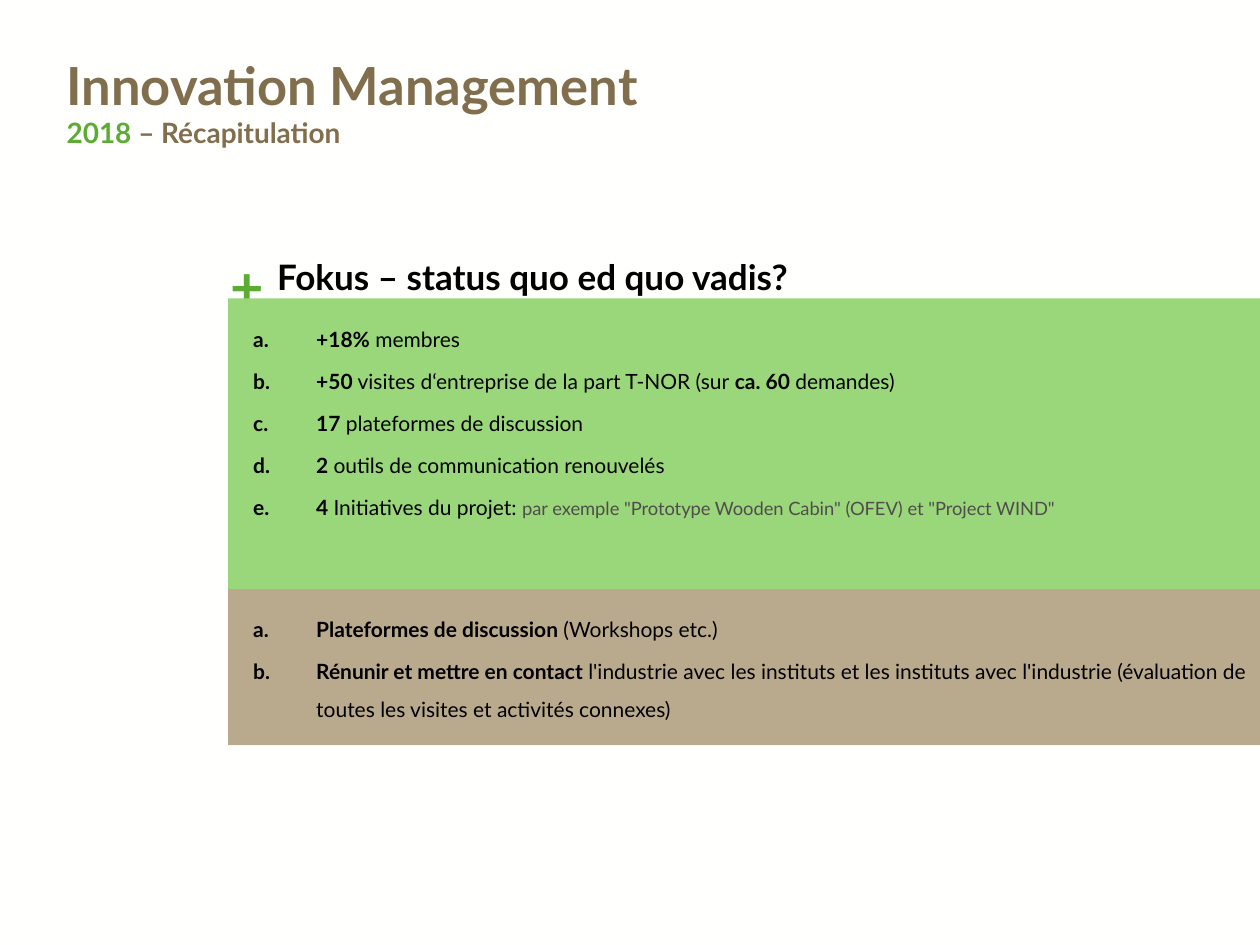
import pptx
import pptx.dml.color
import pptx.enum.shapes
import pptx.enum.text
import pptx.oxml.ns
import pptx.util
from lxml import etree

Pt = pptx.util.Pt

THEME = {
    "font": "Lato",
    "background": "FFFFFE", "brown": "806E4D", "green": "5CAC34",
    "black": "000000", "grey": "504C4C",
    "light green": "9AD77B", "light brown": "BAAA8D",
    "title": 30, "subtitle": 16, "plus": 33, "heading": 20,
    "item": 12, "example": 10.5,
}

# Content: each run is (text, size, colour, bold)
def strong(text):
    return (text, "item", "black", True)


def plain(text):
    return (text, "item", "black", False)


TITLE = [
    ("Innovation Management", "title", "brown", True),
    None,  # line break
    ("2018 ", "subtitle", "green", True),
    ("– Récapitulation", "subtitle", "brown", True),
]
PLUS = [("+", "plus", "green", True)]
HEADING = [("Fokus – status quo ed quo vadis?", "heading", "black", True)]
RESULTS = [
    [strong("+18%"), plain(" membres")],
    [strong("+50"), plain(" visites d‘entreprise de la part T-NOR (sur "),
     strong("ca. 60"), plain(" demandes)")],
    [strong("17"), plain(" plateformes de discussion")],
    [strong("2 "), plain("outils de communication renouvelés")],
    [strong("4 "), plain("Initiatives du projet: "),
     ('par exemple "Prototype Wooden Cabin" (OFEV) et "Project WIND"',
      "example", "grey", False)],
]
OUTLOOK = [
    [strong("Plateformes de discussion "), plain("(Workshops etc.)")],
    [strong("Rénunir et mettre en contact "),
     plain("l'industrie avec les instituts et les instituts avec l'industrie "
           "(évaluation de toutes les visites et activités connexes)")],
]

# Layout in points
SLIDE_W, SLIDE_H = 720, 540
PANEL_LEFT, PANEL_TOP = 130.3, 170.6
PANELS = [(RESULTS, "light green", 166), (OUTLOOK, "light brown", 89.2)]
INDENT = 36


def colour(name):
    return pptx.dml.color.RGBColor.from_string(THEME[name])


def write_runs(paragraph, runs):
    for entry in runs:
        if entry is None:
            paragraph.add_line_break()
            continue
        text, size, ink, bold = entry
        run = paragraph.add_run()
        run.text = text
        run.font.name = THEME["font"]
        run.font.size = Pt(THEME[size])
        run.font.bold = bold
        run.font.color.rgb = colour(ink)


def add_label(slide, runs, left, top, width, height):
    frame = slide.shapes.add_textbox(Pt(left), Pt(top), Pt(width), Pt(height)).text_frame
    frame.word_wrap = True
    write_runs(frame.paragraphs[0], runs)


def letter_item(paragraph):
    properties = paragraph._p.get_or_add_pPr()
    properties.set("marL", str(Pt(INDENT)))
    properties.set("indent", str(-Pt(INDENT)))
    numbering = etree.SubElement(properties, pptx.oxml.ns.qn("a:buAutoNum"))
    numbering.set("type", "alphaLcPeriod")


def add_panel(slide, items, fill, top, height):
    panel = slide.shapes.add_shape(
        pptx.enum.shapes.MSO_SHAPE.RECTANGLE,
        Pt(PANEL_LEFT), Pt(top), Pt(SLIDE_W - PANEL_LEFT), Pt(height))
    panel.shadow.inherit = False
    panel.fill.solid()
    panel.fill.fore_color.rgb = colour(fill)
    panel.line.fill.background()
    frame = panel.text_frame
    frame.word_wrap = True
    frame.vertical_anchor = pptx.enum.text.MSO_ANCHOR.TOP
    frame.margin_left, frame.margin_right = Pt(14.4), Pt(7.2)
    frame.margin_top, frame.margin_bottom = Pt(8.6), Pt(14.4)
    for index, runs in enumerate(items):
        paragraph = frame.add_paragraph() if index else frame.paragraphs[0]
        letter_item(paragraph)
        paragraph.alignment = pptx.enum.text.PP_ALIGN.LEFT
        paragraph.line_spacing = 1.5
        if index:
            paragraph.space_before = Pt(0.2 * THEME["item"])
        write_runs(paragraph, runs)


def main():
    deck = pptx.Presentation()
    deck.slide_width, deck.slide_height = Pt(SLIDE_W), Pt(SLIDE_H)
    slide = deck.slides.add_slide(deck.slide_layouts[6])
    slide.background.fill.solid()
    slide.background.fill.fore_color.rgb = colour("background")

    # Title, then the plus sign that the first panel partly covers
    add_label(slide, TITLE, 31, 26.6, 505.4, 90)
    add_label(slide, PLUS, 124.6, 139.7, 68.4, 45.4)

    # Stacked panels
    top = PANEL_TOP
    for items, fill, height in PANELS:
        add_panel(slide, items, fill, top, height)
        top += height

    # Heading above the panels
    add_label(slide, HEADING, 151.2, 142.6, 414, 31)
    deck.save("out.pptx")


if __name__ == "__main__":
    main()
